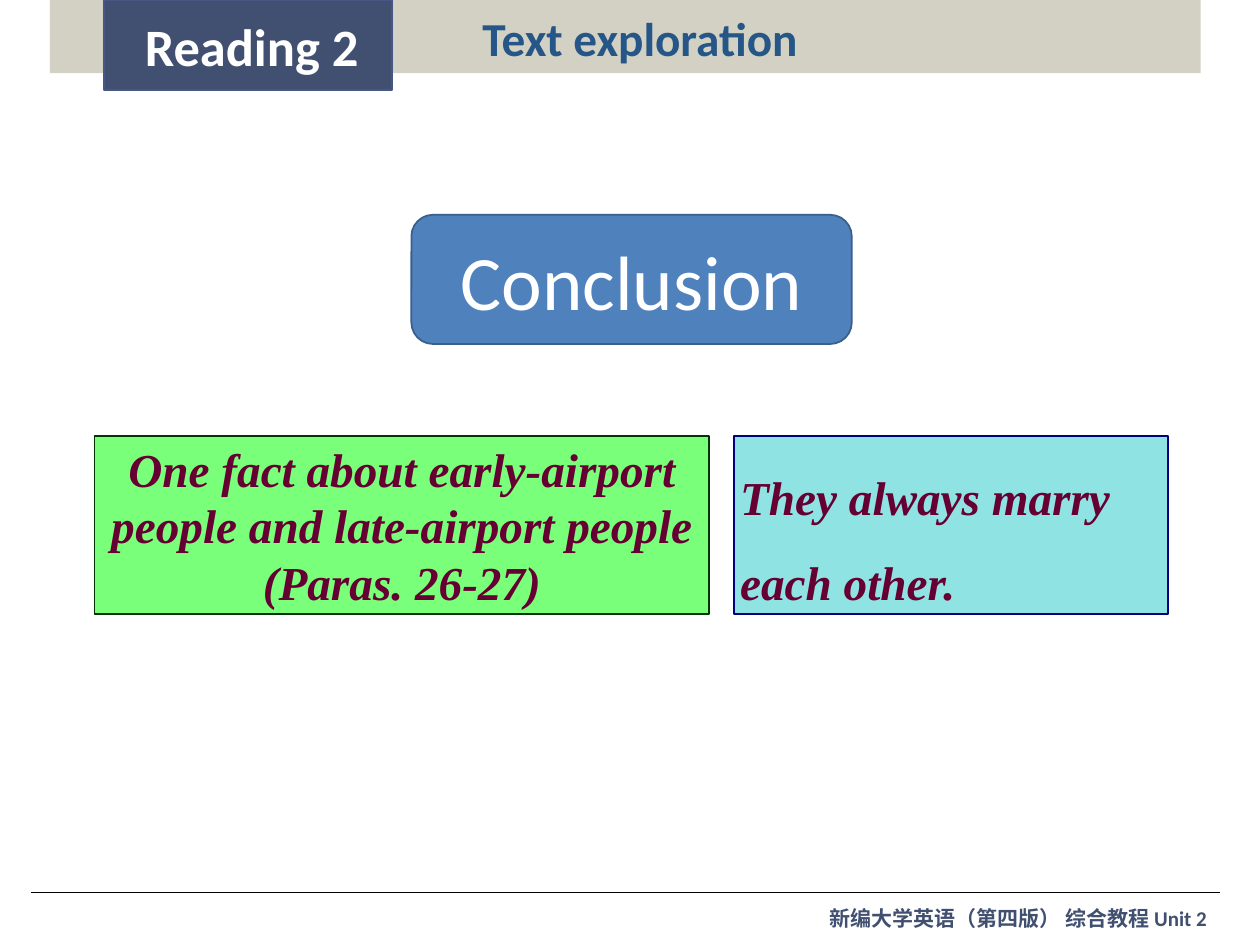
from dataclasses import dataclass

from lxml.etree import SubElement
from pptx import Presentation
from pptx.dml.color import RGBColor
from pptx.enum.shapes import MSO_CONNECTOR, MSO_SHAPE
from pptx.enum.text import MSO_ANCHOR, PP_ALIGN
from pptx.oxml.ns import qn
from pptx.util import Inches, Pt


@dataclass(frozen=True)
class Theme:
    band: str = "D2D1C3"
    navy: str = "415070"
    navy_edge: str = "465685"
    title: str = "255687"
    blue: str = "4F81BD"
    blue_edge: str = "3A5F8C"
    green: str = "00FF00"
    green_edge: str = "003300"
    teal: str = "33CCCC"
    teal_edge: str = "000080"
    wine: str = "660033"
    white: str = "FFFFFF"
    black: str = "000000"
    sans: str = "Calibri"
    serif: str = "Times New Roman"
    footer_font: str = "Arial"
    footer_size: int = 24
    body_size: int = 54
    label_size: int = 60
    heading_size: int = 88


THEME = Theme()


def rgb(color):
    return RGBColor.from_string(color)


def style_run(r, font, size, color, bold=True, italic=False):
    r.font.name, r.font.size = font, Pt(size)
    r.font.bold, r.font.italic = bold, italic
    r.font.color.rgb = rgb(color)


def write(sp, text, font, size, color, align=PP_ALIGN.LEFT,
          anchor=MSO_ANCHOR.TOP, spacing=1.0, bold=True, italic=False):
    tf = sp.text_frame
    tf.word_wrap = True
    tf.vertical_anchor = anchor
    tf.text = text
    for p in tf.paragraphs:
        p.alignment, p.line_spacing = align, spacing
        for r in p.runs:
            style_run(r, font, size, color, bold, italic)


def add_text(s, x, y, w, h):
    return s.shapes.add_textbox(Inches(x), Inches(y), Inches(w), Inches(h))


def add_block(s, kind, x, y, w, h, fill, edge=None, opacity=None):
    sp = s.shapes.add_shape(kind, Inches(x), Inches(y), Inches(w), Inches(h))
    sp.shadow.inherit = False
    sp.fill.solid()
    sp.fill.fore_color.rgb = rgb(fill)
    if opacity:
        color = sp.fill._xPr.find(qn("a:solidFill"))[0]
        SubElement(color, qn("a:alpha"), val=str(opacity * 1000))
    if edge:
        sp.line.color.rgb = rgb(edge)
        sp.line.width = Pt(2)
    else:
        sp.line.fill.background()
    return sp


def add_header(s, x, y, w, h):
    t = THEME
    add_block(s, MSO_SHAPE.RECTANGLE, x, y, w, h, t.band)
    # Section tab hangs below the band
    add_block(s, MSO_SHAPE.RECTANGLE, x + 0.86, y, 4.57, 1.43, t.navy, t.navy_edge)
    write(add_text(s, x + 1.41, y + 0.18, 4.57, 1.11), "Reading 2",
          t.sans, t.label_size, t.white)
    write(add_text(s, x + 5.75, y + 0.1, 7.24, 1.01), "Text exploration",
          t.sans, t.body_size, t.title, PP_ALIGN.CENTER)


def add_heading(s, x, y, w, h):
    t = THEME
    sp = add_block(s, MSO_SHAPE.ROUNDED_RECTANGLE, x, y, w, h, t.blue, t.blue_edge)
    write(sp, "Conclusion", t.sans, t.heading_size, t.white,
          PP_ALIGN.CENTER, MSO_ANCHOR.MIDDLE, bold=False)


def add_findings(s, x, y, w, h):
    t = THEME
    topic_w, answer_w = 9.76, 6.89
    topic = add_block(s, MSO_SHAPE.RECTANGLE, x, y, topic_w, h,
                      t.green, t.green_edge, 52)
    answer = add_block(s, MSO_SHAPE.RECTANGLE, x + w - answer_w, y, answer_w, h,
                       t.teal, t.teal_edge, 54)
    write(topic, "One fact about early-airport people and late-airport people\n"
          "(Paras. 26-27)", t.serif, t.body_size, t.wine,
          PP_ALIGN.CENTER, MSO_ANCHOR.MIDDLE, italic=True)
    write(answer, "They always marry each other.", t.serif, t.body_size, t.wine,
          anchor=MSO_ANCHOR.MIDDLE, spacing=1.5, italic=True)


def add_footer(s, x, y, w):
    t = THEME
    rule = s.shapes.add_connector(MSO_CONNECTOR.STRAIGHT, Inches(x), Inches(y),
                                  Inches(x + w), Inches(y))
    rule.line.color.rgb = rgb(t.black)
    rule.line.width = Pt(0.75)
    SubElement(rule._element.spPr, qn("a:effectLst"))
    # Book title and unit
    sp = add_text(s, x + 12.58, y + 0.15, 6.8, 0.5)
    write(sp, "新编大学英语（第四版） 综合教程 ", t.footer_font, t.footer_size, t.navy)
    r = sp.text_frame.paragraphs[0].add_run()
    r.text = "Unit 2"
    style_run(r, t.sans, t.footer_size, t.navy)


def main():
    prs = Presentation()
    prs.slide_width, prs.slide_height = Inches(20), Inches(15)
    s = prs.slides.add_slide(prs.slide_layouts[6])
    add_footer(s, 0.49, 14.17, 18.87)
    add_header(s, 0.79, 0, 18.27, 1.16)
    add_heading(s, 6.53, 3.41, 6.99, 2.05)
    add_findings(s, 1.5, 6.92, 17.04, 2.83)
    prs.save("out.pptx")


if __name__ == "__main__":
    main()
